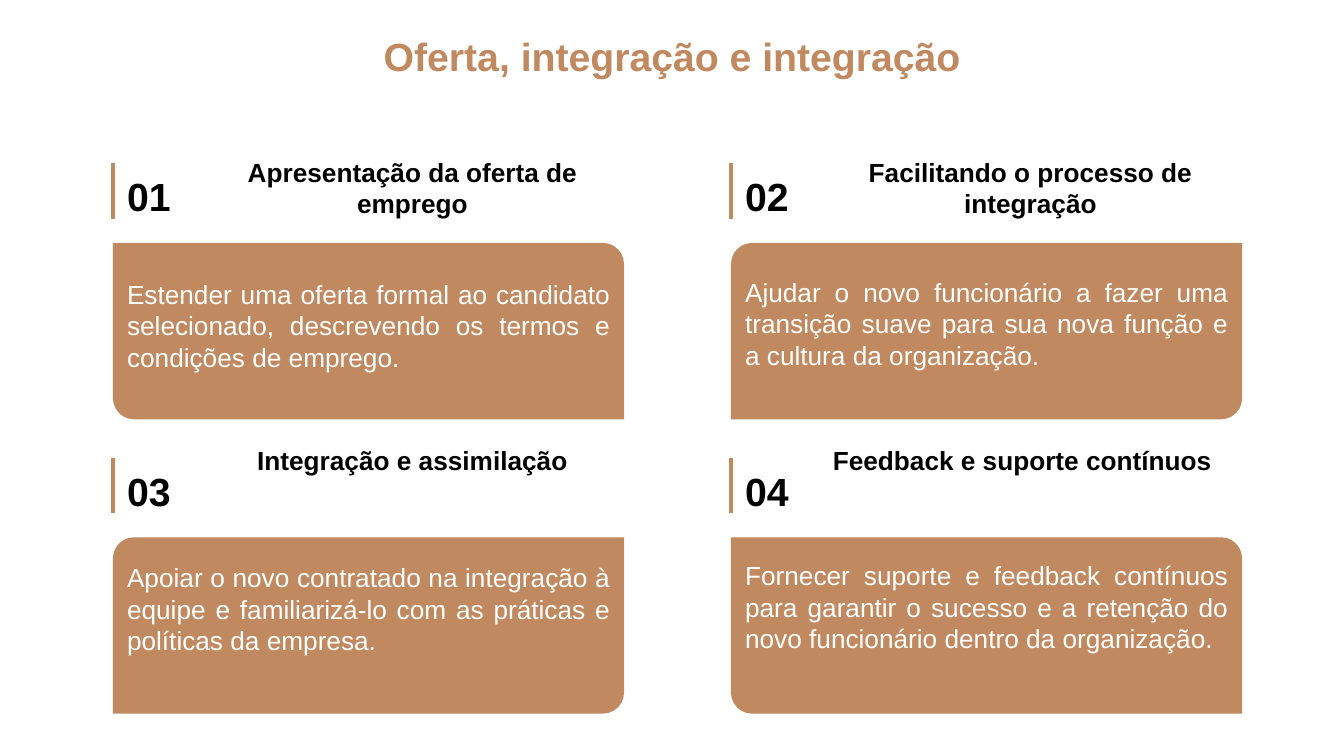
from lxml import etree
from pptx import Presentation
from pptx import util as u
from pptx.dml.color import RGBColor
from pptx.enum import shapes, text
from pptx.oxml.ns import qn

BROWN, BLACK, WHITE = "C18960", "000000", "FFFFFF"
LEFT, CENTER, JUSTIFY = text.PP_ALIGN.LEFT, text.PP_ALIGN.CENTER, text.PP_ALIGN.JUSTIFY

# Card grid, in inches
GRID_LEFT, GRID_TOP = 1.12, 2.41
COLUMN_STEP, ROW_STEP = 6.13, 2.92
CARD_WIDTH, CARD_HEIGHT = 5.07, 1.75
HEADING_INDENT = 0.87
CORNER = 0.12

# Heading, its alignment, its line spacing, body, body's distance below the card top
cards = [
    ("Apresentação da oferta de emprego", CENTER, 1.0,
     "Estender uma oferta formal ao candidato selecionado, descrevendo os termos "
     "e condições de emprego.", 0.21),
    ("Facilitando o processo de integração", CENTER, 1.0,
     "Ajudar o novo funcionário a fazer uma transição suave para sua nova função "
     "e a cultura da organização.", 0.19),
    ("Integração e assimilação", CENTER, 0.8,
     "Apoiar o novo contratado na integração à equipe e familiarizá-lo com as "
     "práticas e políticas da empresa.", 0.1),
    ("Feedback e suporte contínuos", LEFT, 0.8,
     "Fornecer suporte e feedback contínuos para garantir o sucesso e a retenção "
     "do novo funcionário dentro da organização.", 0.08),
]

presentation = Presentation()
presentation.slide_width, presentation.slide_height = u.Inches(13.33), u.Inches(7.5)
slide = presentation.slides.add_slide(presentation.slide_layouts[5])


def paint(color_format, color):
    color_format.rgb = RGBColor.from_string(color)


def write(box, position, words, size, color, bold=False, align=LEFT, spacing=1.0):
    """Place a text shape at (left, top, width, height) and set its one paragraph."""
    box.left, box.top, box.width, box.height = map(u.Inches, position)
    frame = box.text_frame
    frame.word_wrap = True
    frame.auto_size = text.MSO_AUTO_SIZE.NONE
    frame.vertical_anchor = text.MSO_ANCHOR.TOP
    frame.margin_left = frame.margin_right = u.Inches(0.14)
    frame.margin_top = frame.margin_bottom = u.Inches(0.14)
    paragraph = frame.paragraphs[0]
    paragraph.text = words
    paragraph.alignment = align
    paragraph.line_spacing = spacing
    paragraph.space_before = u.Pt(5)
    paragraph.font.name = "Arial"
    paragraph.font.size = u.Pt(size)
    paragraph.font.bold = bold
    paint(paragraph.font.color, color)


write(slide.shapes.title, (0.93, 0.27, 11.47, 0.66),
      "Oferta, integração e integração", 28, BROWN, True, CENTER, 0.8)

for index, (heading, align, spacing, body, body_drop) in enumerate(cards):
    row, column = divmod(index, 2)
    left = GRID_LEFT + column * COLUMN_STEP
    top = GRID_TOP + row * ROW_STEP

    panel = slide.shapes.add_shape(
        shapes.MSO_SHAPE.ROUND_2_DIAG_RECTANGLE,
        *map(u.Inches, (left, top, CARD_WIDTH, CARD_HEIGHT)))
    # Neighbouring cards round opposite diagonals
    rounded = (row + column) % 2
    panel.adjustments[0] = CORNER if rounded else 0
    panel.adjustments[1] = 0 if rounded else CORNER
    panel.shadow.inherit = False
    panel.fill.solid()
    paint(panel.fill.fore_color, BROWN)
    panel.line.fill.background()

    bar = slide.shapes.add_connector(
        shapes.MSO_CONNECTOR.STRAIGHT,
        *map(u.Inches, (left, top - 0.79, left, top - 0.24)))
    bar.line.width = u.Pt(3)
    paint(bar.line.color, BROWN)
    etree.SubElement(bar.element.spPr, qn("a:effectLst"))

    number_box, heading_box, body_box = (
        slide.shapes.add_textbox(0, 0, 0, 0) for _ in range(3))
    write(number_box, (left, top - 0.93, 0.83, 0.81),
          f"{index + 1:02}", 28, BLACK, True, spacing=1.2)
    write(heading_box, (left + HEADING_INDENT, top - 1, CARD_WIDTH - HEADING_INDENT, 0.91),
          heading, 18.7, BLACK, True, align, spacing)
    write(body_box, (left, top + body_drop, CARD_WIDTH, 1.22),
          body, 18.7, WHITE, align=JUSTIFY)

presentation.save("out.pptx")
